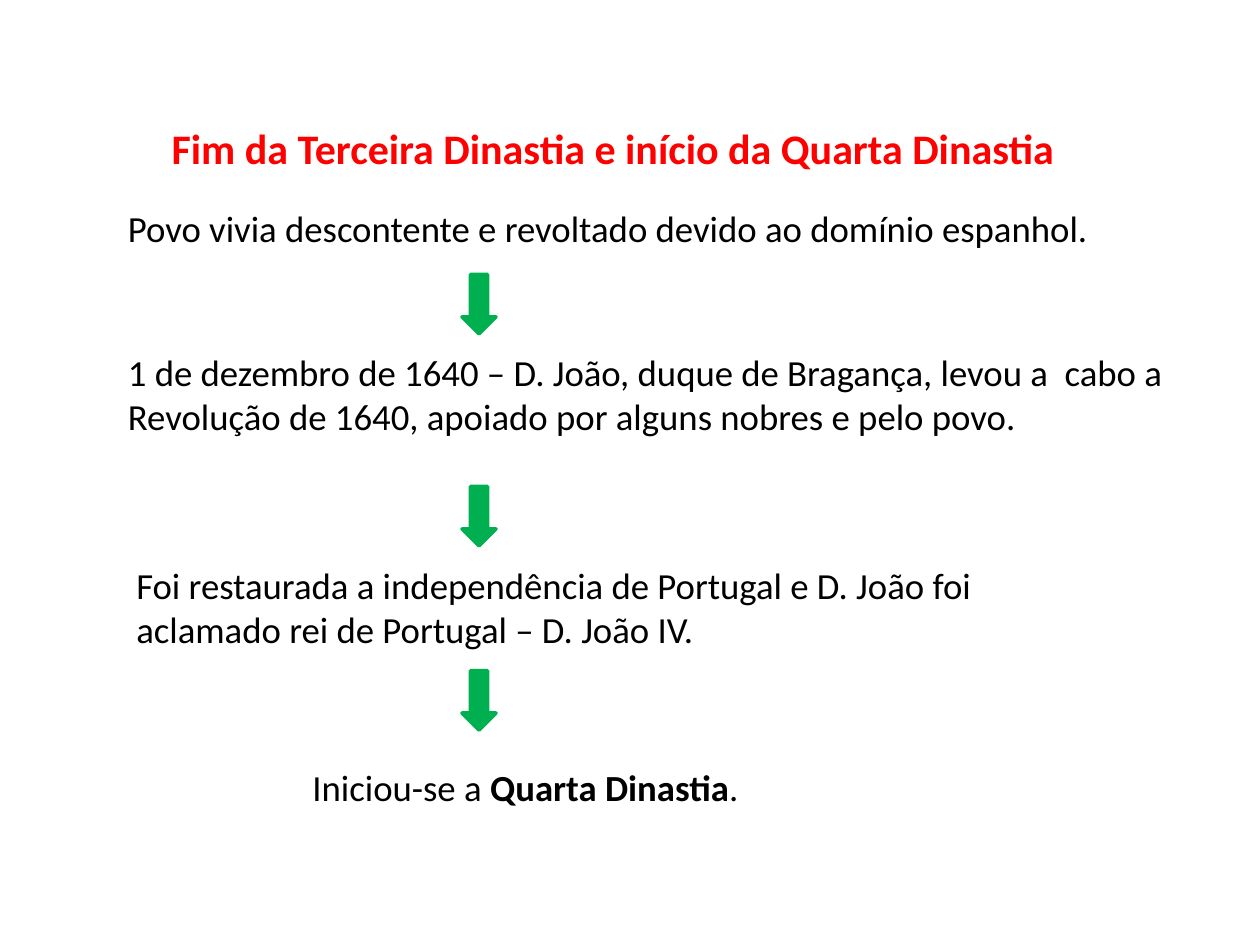
from dataclasses import dataclass

from pptx import Presentation
from pptx.dml.color import RGBColor
from pptx.enum.shapes import MSO_SHAPE
from pptx.enum.text import MSO_ANCHOR, MSO_AUTO_SIZE, PP_ALIGN
from pptx.util import Pt

DOWN_ARROW = MSO_SHAPE.DOWN_ARROW
TOP = MSO_ANCHOR.TOP
FIT_SHAPE = MSO_AUTO_SIZE.SHAPE_TO_FIT_TEXT
LEFT, CENTER = PP_ALIGN.LEFT, PP_ALIGN.CENTER
TITLE_ONLY = 5


@dataclass(frozen=True)
class Theme:
    font: str = "Calibri"
    title_size: float = 24
    body_size: float = 21
    title_color: RGBColor = RGBColor(255, 0, 0)
    body_color: RGBColor = RGBColor(0, 0, 0)
    arrow_color: RGBColor = RGBColor(0, 176, 80)


THEME = Theme()

STEPS = [
    ((66, 114, 576, 32.4),
     [("Povo vivia descontente e revoltado devido ao domínio espanhol.", False)]),
    ((66, 196.5, 605.5, 58.3),
     [("1 de dezembro de 1640 – D. João, duque de Bragança, levou a  cabo "
       "a Revolução de 1640, apoiado por alguns nobres e pelo povo.", False)]),
    ((70.8, 318, 558.7, 58.3),
     [("Foi restaurada a independência de Portugal e D. João foi "
       "aclamado rei de Portugal – D. João IV.", False)]),
    ((171.4, 433.4, 296.6, 32.4),
     [("Iniciou-se a ", False), ("Quarta Dinastia", True), (".", False)]),
]

ARROW_LEFT, ARROW_WIDTH, ARROW_HEIGHT = 264, 19.5, 34
ARROW_TOPS = (156.8, 278, 383.2)


def place(shape, left, top, width, height):
    shape.left, shape.top = Pt(left), Pt(top)
    shape.width, shape.height = Pt(width), Pt(height)


def write_text(shape, runs, size=THEME.body_size, color=THEME.body_color, align=LEFT):
    frame = shape.text_frame
    frame.word_wrap = True
    frame.auto_size = FIT_SHAPE
    frame.vertical_anchor = TOP
    paragraph = frame.paragraphs[0]
    paragraph.alignment = align
    for text, bold in runs:
        run = paragraph.add_run()
        run.text = text
        run.font.name = THEME.font
        run.font.size = Pt(size)
        run.font.bold = bold
        run.font.color.rgb = color


def add_title(slide, text):
    title = slide.shapes.title
    place(title, 76.3, 66.2, 548, 36)
    write_text(title, [(text, True)], size=THEME.title_size,
               color=THEME.title_color, align=CENTER)


def add_step(slide, box, runs):
    shape = slide.shapes.add_textbox(*map(Pt, box))
    write_text(shape, runs)


def add_down_arrow(slide, top):
    arrow = slide.shapes.add_shape(DOWN_ARROW, Pt(ARROW_LEFT), Pt(top),
                                   Pt(ARROW_WIDTH), Pt(ARROW_HEIGHT))
    arrow.shadow.inherit = False
    arrow.fill.solid()
    arrow.fill.fore_color.rgb = THEME.arrow_color
    arrow.line.color.rgb = THEME.arrow_color
    arrow.line.width = Pt(2)


def main():
    presentation = Presentation()
    presentation.slide_width, presentation.slide_height = Pt(720), Pt(540)
    slide = presentation.slides.add_slide(presentation.slide_layouts[TITLE_ONLY])
    add_title(slide, "Fim da Terceira Dinastia e início da Quarta Dinastia")
    for box, runs in STEPS:
        add_step(slide, box, runs)
    for top in ARROW_TOPS:
        add_down_arrow(slide, top)
    presentation.save("out.pptx")


if __name__ == "__main__":
    main()
